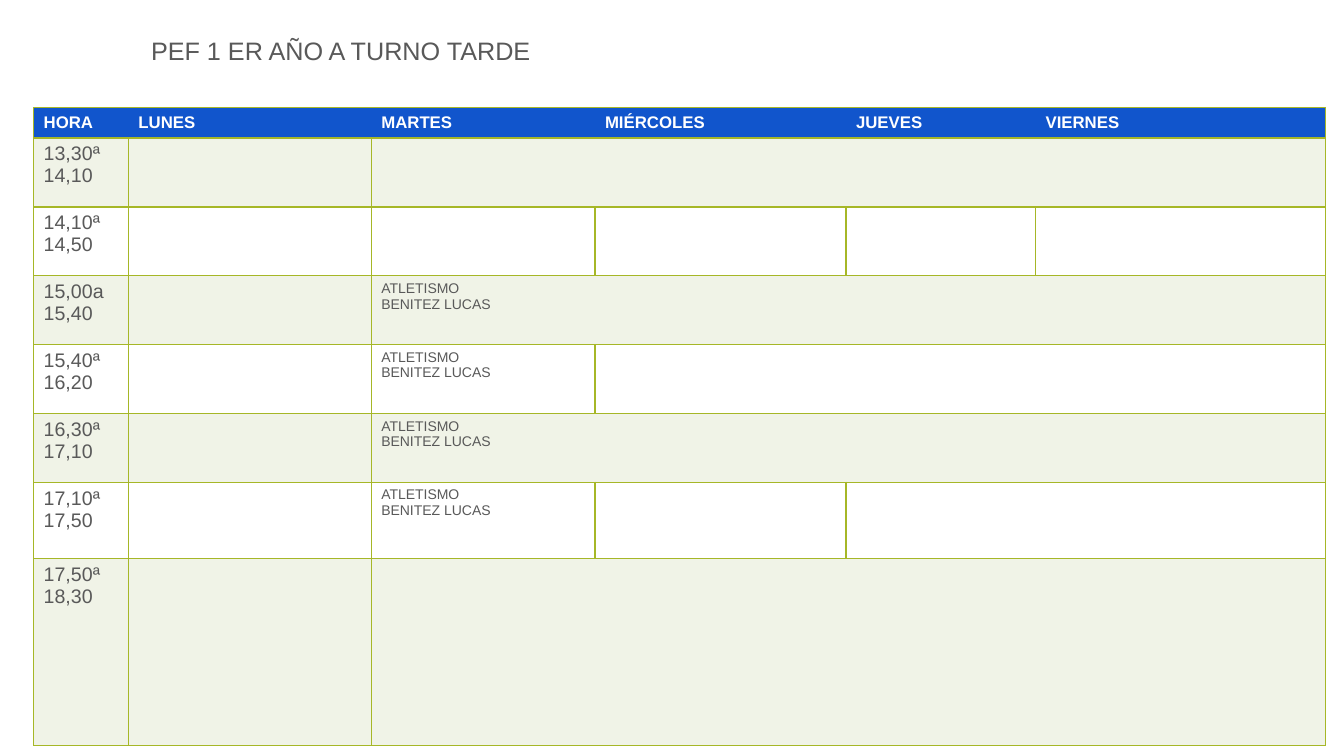
import dataclasses

import lxml.etree
import pptx
import pptx.dml.color
import pptx.enum.text
import pptx.oxml.ns
import pptx.util

Pt = pptx.util.Pt


@dataclasses.dataclass(frozen=True)
class Theme:
    font: str = "Arial"
    ink: str = "595959"
    white: str = "FFFFFF"
    header: str = "1155CC"
    band: str = "F0F3E7"
    border: str = "A6B727"
    border_width: float = 1
    title_size: float = 18
    header_size: float = 12
    hour_size: float = 14
    lesson_size: float = 10


@dataclasses.dataclass(frozen=True)
class Period:
    start: str
    end: str
    height: float
    dividers: int
    lesson: tuple[str, ...] = ()


THEME = Theme()
DAYS = ("HORA", "LUNES", "MARTES", "MIÉRCOLES", "JUEVES", "VIERNES")
WIDTHS = (67.7, 173.5, 159.8, 179.3, 135.4, 207.4)
HEADER_HEIGHT = 20.8
LESSON_COLUMN = DAYS.index("MARTES")
ATHLETICS = ("ATLETISMO", "BENITEZ LUCAS")
PERIODS = (
    Period("13,30ª", "14,10", 49.2, 2),
    Period("14,10ª", "14,50", 49.2, 5),
    Period("15,00a", "15,40", 49.2, 2, ATHLETICS),
    Period("15,40ª", "16,20", 49.2, 3, ATHLETICS),
    Period("16,30ª", "17,10", 49.2, 2, ATHLETICS),
    Period("17,10ª", "17,50", 54.7, 4, ATHLETICS),
    Period("17,50ª", "18,30", 133.2, 2),
)


def write(frame, lines: tuple[str, ...], size: float, color: str, bold: bool = False) -> None:
    font_format = {"name": THEME.font, "size": Pt(size), "bold": bold}
    for index, line in enumerate(lines):
        para = frame.paragraphs[0] if index == 0 else frame.add_paragraph()
        span = para.add_run()
        span.text = line
        for name, value in font_format.items():
            setattr(span.font, name, value)
        span.font.color.rgb = pptx.dml.color.RGBColor.from_string(color)


def draw_borders(cell, sides: dict[str, bool]) -> None:
    qualified = pptx.oxml.ns.qn
    properties = cell._tc.get_or_add_tcPr()
    for side, visible in sides.items():
        line = lxml.etree.SubElement(properties, qualified(f"a:ln{side}"), w=str(Pt(THEME.border_width)))
        if visible:
            fill = lxml.etree.SubElement(line, qualified("a:solidFill"))
            lxml.etree.SubElement(fill, qualified("a:srgbClr"), val=THEME.border)
        else:
            lxml.etree.SubElement(line, qualified("a:noFill"))


def style_row(table, row: int, height: float, fill: str, dividers: int) -> None:
    table.rows[row].height = Pt(height)
    last = len(DAYS) - 1
    for column in range(len(DAYS)):
        cell = table.cell(row, column)
        draw_borders(cell, {
            "L": column <= dividers,
            "R": column < dividers or column == last,
            "T": True,
            "B": True,
        })
        cell.fill.solid()
        cell.fill.fore_color.rgb = pptx.dml.color.RGBColor.from_string(fill)


def add_title(page) -> None:
    box = page.shapes.add_textbox(Pt(100.8), Pt(7.2), Pt(745.2), Pt(43.2))
    frame_format = {"word_wrap": True, "vertical_anchor": pptx.enum.text.MSO_ANCHOR.BOTTOM}
    for name, value in frame_format.items():
        setattr(box.text_frame, name, value)
    write(box.text_frame, ("PEF 1 ER AÑO A TURNO TARDE",), THEME.title_size, THEME.ink)
    box.text_frame.paragraphs[0].line_spacing = 0.9


def add_timetable(page) -> None:
    height = HEADER_HEIGHT + sum(period.height for period in PERIODS)
    table = page.shapes.add_table(
        len(PERIODS) + 1, len(DAYS), Pt(24), Pt(77), Pt(sum(WIDTHS)), Pt(height)
    ).table
    table.horz_banding = False
    for column, (day, width) in enumerate(zip(DAYS, WIDTHS)):
        table.columns[column].width = Pt(width)
        write(table.cell(0, column).text_frame, (day,), THEME.header_size, THEME.white, True)
    style_row(table, 0, HEADER_HEIGHT, THEME.header, 0)
    for row, period in enumerate(PERIODS, start=1):
        fill = THEME.band if row % 2 else THEME.white
        style_row(table, row, period.height, fill, period.dividers)
        hours = (period.start, period.end)
        write(table.cell(row, 0).text_frame, hours, THEME.hour_size, THEME.ink)
        write(table.cell(row, LESSON_COLUMN).text_frame, period.lesson, THEME.lesson_size, THEME.ink)


def main() -> None:
    deck = pptx.Presentation()
    deck.slide_width, deck.slide_height = Pt(960), Pt(540)
    page = deck.slides.add_slide(deck.slide_layouts[6])
    add_title(page)
    add_timetable(page)
    deck.save("out.pptx")


if __name__ == "__main__":
    main()
